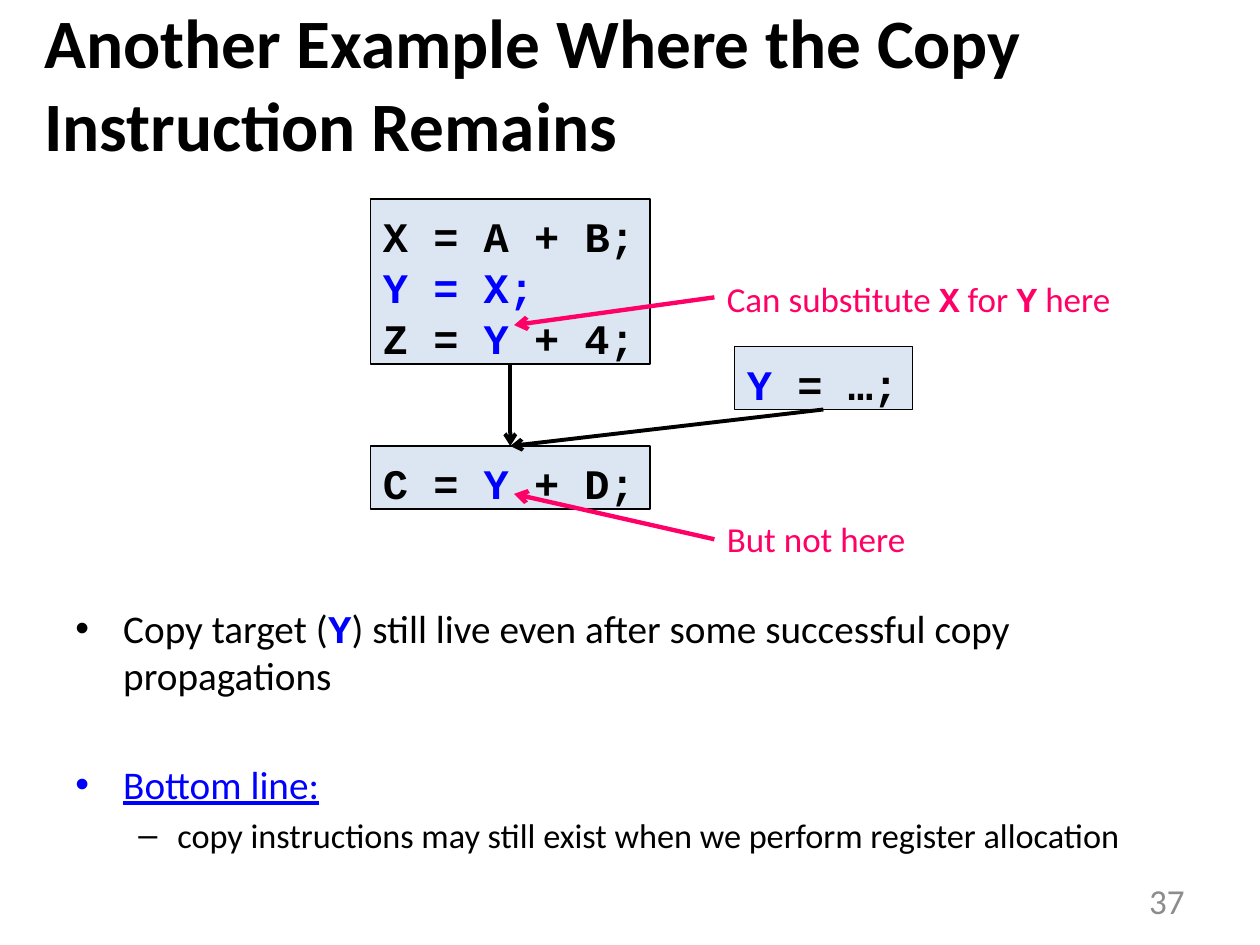
from dataclasses import dataclass
from typing import NamedTuple

from lxml.etree import SubElement
from pptx import Presentation
from pptx.dml.color import RGBColor
from pptx.enum.shapes import MSO_CONNECTOR, MSO_SHAPE
from pptx.enum.text import MSO_ANCHOR, MSO_AUTO_SIZE, PP_ALIGN
from pptx.oxml.ns import qn
from pptx.util import Inches, Pt

BLACK = RGBColor(0x00, 0x00, 0x00)
BLUE = RGBColor(0x00, 0x00, 0xFF)
PINK = RGBColor(0xFF, 0x00, 0x66)
GRAY = RGBColor(0x8C, 0x8C, 0x8C)
PALE_BLUE = RGBColor(0xDC, 0xE6, 0xF2)
PROSE_FONT = "Calibri"
CODE_FONT = "Courier New"
TOP, BOTTOM = 0, 2  # connection sites of a rectangle


class Piece(NamedTuple):
    text: str
    color: RGBColor = BLACK
    code: bool = False
    underline: bool = False


def code(text: str, color: RGBColor = BLACK) -> Piece:
    return Piece(text, color, code=True)


@dataclass
class CodeBlock:
    left: float
    top: float
    width: float
    height: float
    lines: list[list[Piece]]


@dataclass
class Callout:
    top: float
    width: float
    pieces: list[Piece]
    arrow_start_y: float
    arrow_end_y: float


@dataclass
class Bullet:
    pieces: list[Piece]
    size: float
    mark: str
    margin: float
    hanging: float
    space_before: float
    level: int = 0


DEFINITIONS = CodeBlock(2.94, 1.58, 2.22, 1.31, [
    [code("X = A + B;")],
    [code("Y = X;", BLUE)],
    [code("Z = "), code("Y", BLUE), code(" + 4;")],
])
REDEFINITION = CodeBlock(5.83, 2.75, 1.41, 0.5, [[code("Y ", BLUE), code("= …;")]])
USE = CodeBlock(2.94, 3.54, 2.22, 0.5, [[code("C = "), code("Y", BLUE), code(" + D;")]])

CALLOUT_LEFT, CALLOUT_TARGET_X = 5.67, 4.08
CALLOUTS = [
    Callout(2.15, 3.83, [Piece("Can substitute ", PINK), code("X", PINK), Piece(" for ", PINK),
                         code("Y", PINK), Piece(" here", PINK)], 2.36, 2.58),
    Callout(4.06, 2, [Piece("But not here", PINK)], 4.28, 3.92),
]

BULLETS = [
    Bullet([Piece("Copy target ("), code("Y", BLUE),
            Piece(") still live even after some successful copy propagations")],
           22.4, "•", 0.38, 0.38, 4.5),
    Bullet([Piece("Bottom line:", BLUE, underline=True)], 22.4, "•", 0.38, 0.38, 35),
    Bullet([Piece("copy instructions may still exist when we perform register allocation")],
           19.6, "–", 0.81, 0.31, 4, level=1),
]


def write_pieces(paragraph, pieces: list[Piece], size: float) -> None:
    for piece in pieces:
        run = paragraph.add_run()
        run.text = piece.text
        font = run.font
        font.size = Pt(size)
        font.name = CODE_FONT if piece.code else PROSE_FONT
        font.bold = piece.code
        font.underline = piece.underline
        font.color.rgb = piece.color


def add_text_frame(slide, left: float, top: float, width: float, height: float):
    frame = slide.shapes.add_textbox(
        Inches(left), Inches(top), Inches(width), Inches(height)).text_frame
    frame.word_wrap = True
    return frame


def add_title(slide, text: str) -> None:
    title = slide.shapes.title
    title.left, title.top = Inches(0.25), Inches(0)
    title.width, title.height = Inches(9.83), Inches(1.31)
    frame = title.text_frame
    frame.text = text
    frame.auto_size = MSO_AUTO_SIZE.NONE
    frame.vertical_anchor = MSO_ANCHOR.MIDDLE
    paragraph = frame.paragraphs[0]
    paragraph.alignment = PP_ALIGN.LEFT
    font = paragraph.runs[0].font
    font.name, font.size, font.bold = PROSE_FONT, Pt(39.6), True
    font.color.rgb = BLACK


def add_code_block(slide, block: CodeBlock):
    box = slide.shapes.add_shape(
        MSO_SHAPE.RECTANGLE, Inches(block.left), Inches(block.top),
        Inches(block.width), Inches(block.height))
    box.shadow.inherit = False
    box.fill.solid()
    box.fill.fore_color.rgb = PALE_BLUE
    box.line.color.rgb = BLACK
    box.line.width = Pt(0.75)
    frame = box.text_frame
    frame.word_wrap = False
    frame.vertical_anchor = MSO_ANCHOR.TOP
    frame.margin_top, frame.margin_bottom = Inches(0.09), Inches(0.01)
    for index, line in enumerate(block.lines):
        paragraph = frame.add_paragraph() if index else frame.paragraphs[0]
        paragraph.alignment = PP_ALIGN.LEFT
        paragraph.line_spacing = Pt(29)
        write_pieces(paragraph, line, 24)
    return box


def add_arrow(slide, start: tuple[float, float], end: tuple[float, float],
              color: RGBColor, width: float):
    arrow = slide.shapes.add_connector(
        MSO_CONNECTOR.STRAIGHT, *(Inches(value) for value in (*start, *end)))
    arrow.line.color.rgb = color
    arrow.line.width = Pt(width)
    SubElement(arrow.line._get_or_add_ln(), qn("a:tailEnd"), type="arrow")
    SubElement(arrow._element.spPr, qn("a:effectLst"))
    return arrow


def add_flow(slide, source, target) -> None:
    arrow = add_arrow(slide, (0, 0), (1, 1), BLACK, 2.25)
    arrow.begin_connect(source, BOTTOM)
    arrow.end_connect(target, TOP)


def add_callout(slide, callout: Callout) -> None:
    frame = add_text_frame(slide, CALLOUT_LEFT, callout.top, callout.width, 0.44)
    write_pieces(frame.paragraphs[0], callout.pieces, 20)
    add_arrow(slide, (CALLOUT_LEFT, callout.arrow_start_y),
              (CALLOUT_TARGET_X, callout.arrow_end_y), PINK, 2.5)


def add_bullets(slide, bullets: list[Bullet]) -> None:
    frame = add_text_frame(slide, 0.5, 4.75, 9, 2.17)
    for index, bullet in enumerate(bullets):
        paragraph = frame.add_paragraph() if index else frame.paragraphs[0]
        paragraph.level = bullet.level
        paragraph.space_before = Pt(bullet.space_before)
        properties = paragraph._p.get_or_add_pPr()
        properties.set("marL", str(Inches(bullet.margin)))
        properties.set("indent", str(-Inches(bullet.hanging)))
        SubElement(properties, qn("a:buFont"), typeface="Arial")
        SubElement(properties, qn("a:buChar"), char=bullet.mark)
        write_pieces(paragraph, bullet.pieces, bullet.size)


def add_page_number(slide, number: str) -> None:
    frame = add_text_frame(slide, 7.17, 6.95, 2.33, 0.4)
    frame.vertical_anchor = MSO_ANCHOR.MIDDLE
    frame.paragraphs[0].alignment = PP_ALIGN.RIGHT
    write_pieces(frame.paragraphs[0], [Piece(number, GRAY)], 20)


def main() -> None:
    deck = Presentation()
    deck.slide_width, deck.slide_height = Inches(10), Inches(7.5)
    slide = deck.slides.add_slide(deck.slide_layouts.get_by_name("Title Only"))
    add_title(slide, "Another Example Where the Copy Instruction Remains")
    add_bullets(slide, BULLETS)
    add_page_number(slide, "37")
    definitions, redefinition, use = (
        add_code_block(slide, block) for block in (DEFINITIONS, REDEFINITION, USE))
    for source in (definitions, redefinition):
        add_flow(slide, source, use)
    for callout in CALLOUTS:
        add_callout(slide, callout)
    deck.save("out.pptx")


if __name__ == "__main__":
    main()
